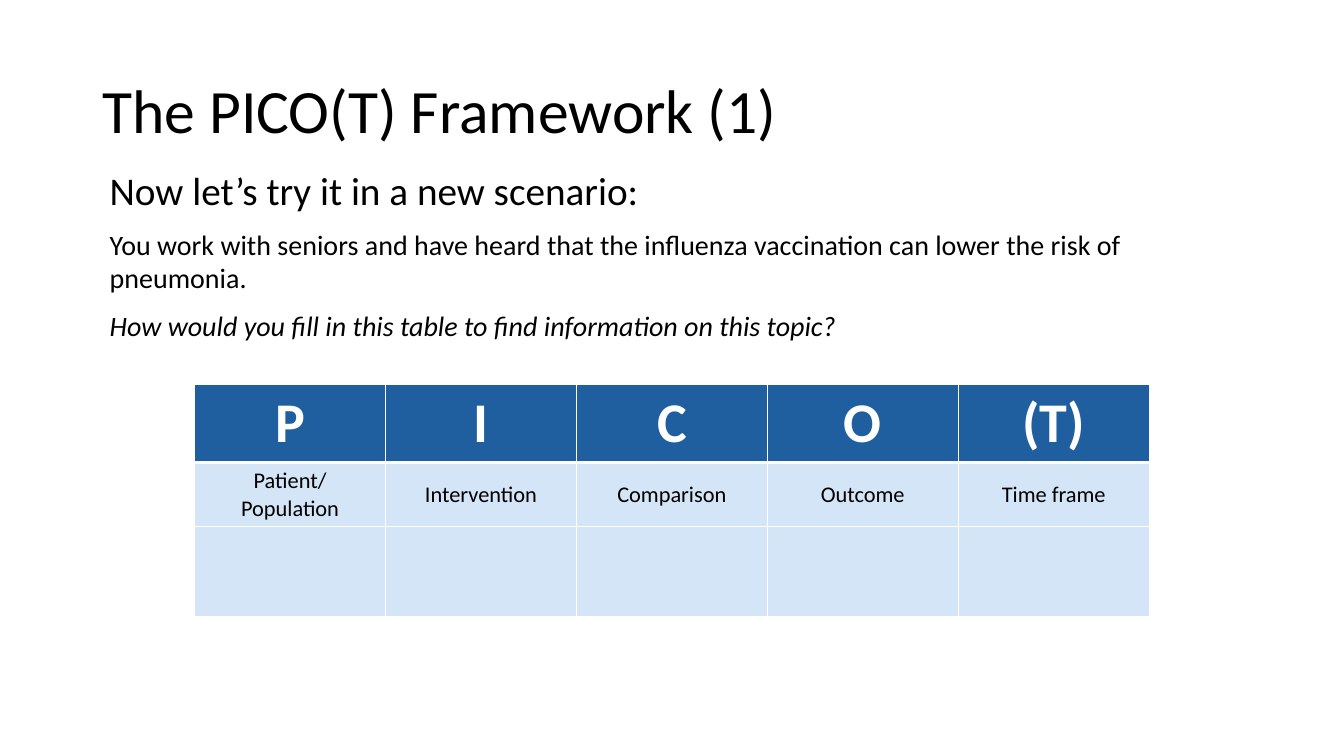
from lxml import etree
from pptx import Presentation
from pptx.dml.color import RGBColor
from pptx.enum.text import MSO_ANCHOR, PP_ALIGN
from pptx.oxml.ns import qn
from pptx.util import Pt

MIDDLE = MSO_ANCHOR.MIDDLE
LEFT, CENTER = PP_ALIGN.LEFT, PP_ALIGN.CENTER
BLACK, WHITE, BLUE, PALE_BLUE = "000000", "FFFFFF", "1F5FA0", "D4E5F7"
TITLE_ONLY = 5


def add_run(paragraph, text, size, color=BLACK, bold=False, italic=False):
    run = paragraph.add_run()
    run.text = text
    run.font.name = "Calibri"
    run.font.size = Pt(size)
    run.font.bold = bold
    run.font.italic = italic
    run.font.color.rgb = RGBColor.from_string(color)


def set_borders(cell, bottom_width):
    """Give the cell white borders, 1 pt wide except at the bottom."""
    properties = cell._tc.get_or_add_tcPr()
    sides = [("lnL", 1), ("lnR", 1), ("lnT", 1), ("lnB", bottom_width)]
    for index, (side, width) in enumerate(sides):
        line = etree.Element(qn(f"a:{side}"), w=str(Pt(width)))
        fill = etree.SubElement(line, qn("a:solidFill"))
        etree.SubElement(fill, qn("a:srgbClr"), val=WHITE)
        properties.insert(index, line)


presentation = Presentation()
presentation.slide_width = Pt(960)
presentation.slide_height = Pt(540)
slide = presentation.slides.add_slide(presentation.slide_layouts[TITLE_ONLY])

# Title
title = slide.shapes.title
title.left, title.top, title.width, title.height = Pt(66), Pt(28.75), Pt(828), Pt(104.4)
title.text_frame.vertical_anchor = MIDDLE
title.text_frame.word_wrap = True
paragraph = title.text_frame.paragraphs[0]
paragraph.alignment = LEFT
paragraph.line_spacing = 0.9
add_run(paragraph, "The PICO(T) Framework (1)", 44)

# Scenario
scenario = [
    ("Now let’s try it in a new scenario:", 28, False),
    ("You work with seniors and have heard that the influenza vaccination "
     "can lower the risk of pneumonia.", 20, False),
    ("How would you fill in this table to find information on this topic?", 20, True),
]
scenario_box = slide.shapes.add_textbox(Pt(71.3), Pt(115.2), Pt(836.6), Pt(342.7))
text_frame = scenario_box.text_frame
text_frame.word_wrap = True
for index, (text, size, italic) in enumerate(scenario):
    paragraph = text_frame.add_paragraph() if index else text_frame.paragraphs[0]
    if index:
        paragraph.space_before = Pt(10)
    add_run(paragraph, text, size, italic=italic)

# PICO(T) table: letters, meanings and a row to fill in
letters = ["P", "I", "C", "O", "(T)"]
meanings = ["Patient/ Population", "Intervention", "Comparison", "Outcome", "Time frame"]
rows = [
    (letters, 56, 40, WHITE, BLUE, 3),
    (meanings, 46, 16, BLACK, PALE_BLUE, 1),
    ([""] * len(letters), 64, 16, BLACK, PALE_BLUE, 1),
]
table = slide.shapes.add_table(
    len(rows), len(letters), Pt(139), Pt(274.3), Pt(682), Pt(166)
).table
for column in table.columns:
    column.width = Pt(136.4)
for row_index, (texts, height, size, color, fill, bottom_width) in enumerate(rows):
    table.rows[row_index].height = Pt(height)
    for column_index, text in enumerate(texts):
        cell = table.cell(row_index, column_index)
        cell.vertical_anchor = MIDDLE
        cell.fill.solid()
        cell.fill.fore_color.rgb = RGBColor.from_string(fill)
        set_borders(cell, bottom_width)
        if text:
            paragraph = cell.text_frame.paragraphs[0]
            paragraph.alignment = CENTER
            add_run(paragraph, text, size, color, bold=row_index == 0)
# The lower edge of the header is also the top edge of the meanings row
for cell in table.rows[1].cells:
    cell._tc.tcPr.find(qn("a:lnT")).set("w", str(Pt(3)))

presentation.save("out.pptx")
